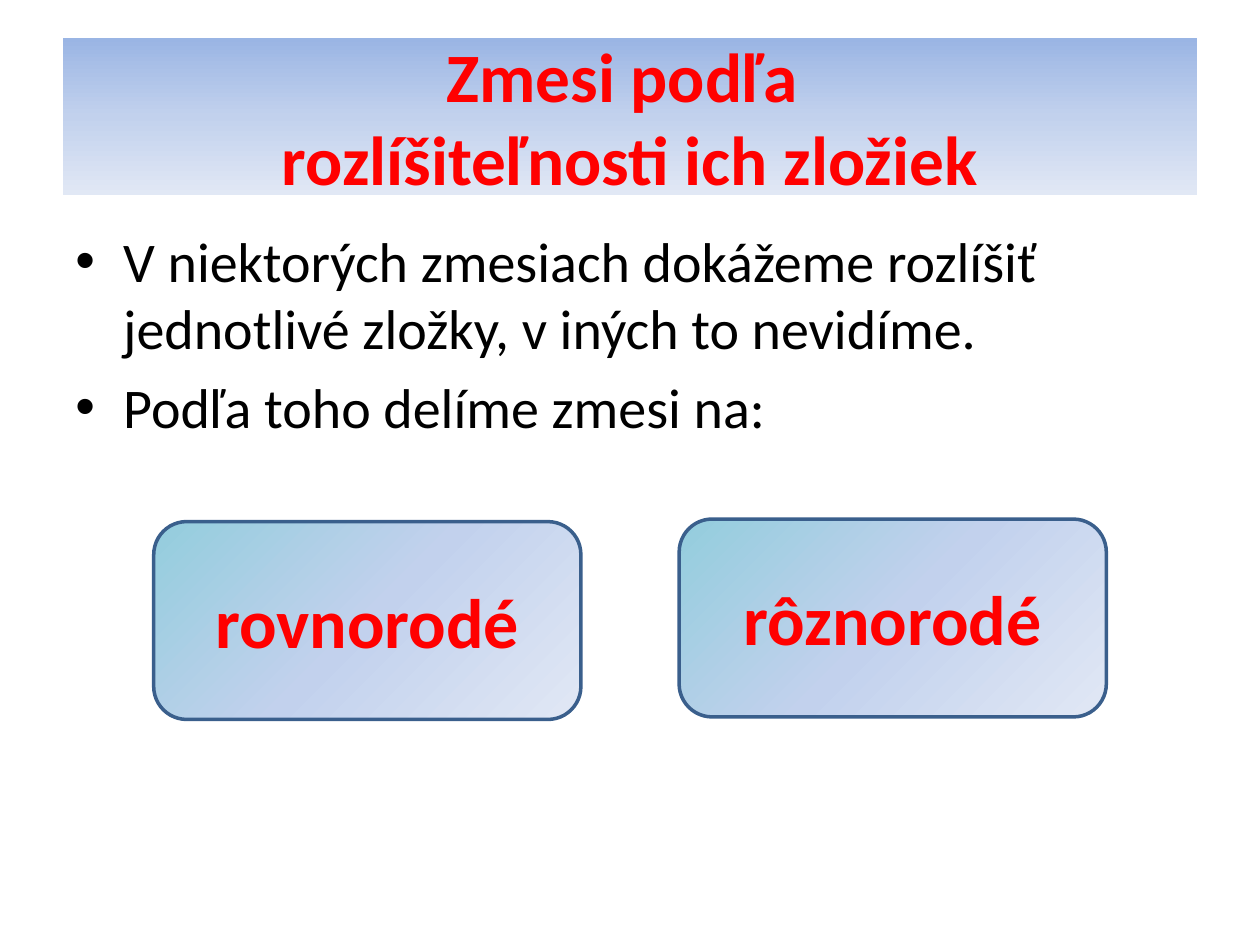
from copy import deepcopy

from lxml.etree import SubElement
from pptx import Presentation
from pptx.dml.color import RGBColor
from pptx.enum.shapes import MSO_SHAPE as Kind
from pptx.enum.text import MSO_ANCHOR as Anchor, MSO_AUTO_SIZE as Fit, PP_ALIGN as Align
from pptx.oxml.ns import qn
from pptx.util import Inches, Pt

RED = RGBColor(0xFF, 0x00, 0x00)
BLACK = RGBColor(0x00, 0x00, 0x00)
EDGE = RGBColor(0x3A, 0x5F, 0x8C)
BLUE = RGBColor(0x9A, 0xB5, 0xE4)
TEAL = RGBColor(0x93, 0xCD, 0xDD)
SOFT = RGBColor(0xC2, 0xD1, 0xED)
PALE = RGBColor(0xE1, 0xE8, 0xF5)


def write(para, text, size=32, color=BLACK, bold=False, align=Align.LEFT, font="Calibri"):
    para.text = text
    para.alignment = align
    para.font.name = font
    para.font.size = Pt(size)
    para.font.color.rgb = color
    para.font.bold = bold
    for run in para.runs:
        run.font.name = font
        run.font.size = Pt(size)
        run.font.color.rgb = color
        run.font.bold = bold


def shade(shape, colors, angle):
    shape.fill.gradient()
    stops = shape.element.spPr.find(".//" + qn("a:gsLst"))
    stops.append(deepcopy(stops[0]))
    for i, (stop, color) in enumerate(zip(shape.fill.gradient_stops, colors)):
        stop.color.rgb = color
        stop.position = i / (len(colors) - 1)
    shape.fill.gradient_angle = 360 - angle


class Deck:
    def __init__(self):
        self.file = Presentation()
        self.file.slide_width = Inches(10)
        self.file.slide_height = Inches(7.5)
        self.slide = self.file.slides.add_slide(self.file.slide_layouts[5])

    def title(self, text, x, y, w, h):
        shape = self.slide.shapes.title
        shape.left, shape.top = Inches(x), Inches(y)
        shape.width, shape.height = Inches(w), Inches(h)
        shade(shape, [BLUE, SOFT, PALE], 90)
        frame = shape.text_frame
        frame.auto_size = Fit.NONE
        frame.vertical_anchor = Anchor.MIDDLE
        write(frame.paragraphs[0], text, size=39.6, color=RED, bold=True, align=Align.CENTER)

    def list(self, items, x, y, w, h):
        box = self.slide.shapes.add_textbox(Inches(x), Inches(y), Inches(w), Inches(h))
        frame = box.text_frame
        frame.word_wrap = True
        for i, item in enumerate(items):
            para = frame.add_paragraph() if i else frame.paragraphs[0]
            props = para._p.get_or_add_pPr()
            props.set("marL", str(Inches(0.38)))
            props.set("indent", str(Inches(-0.38)))
            SubElement(props, qn("a:buFont")).set("typeface", "Arial")
            SubElement(props, qn("a:buChar")).set("char", "•")
            if i:
                para.space_before = Pt(6.4)
            write(para, item)

    def card(self, text, x, y, w=3.39, h=1.57):
        shape = self.slide.shapes.add_shape(
            Kind.ROUNDED_RECTANGLE, Inches(x), Inches(y), Inches(w), Inches(h))
        shape.shadow.inherit = False
        shade(shape, [TEAL, SOFT, PALE], 45)
        shape.line.color.rgb = EDGE
        shape.line.width = Pt(2)
        frame = shape.text_frame
        frame.vertical_anchor = Anchor.MIDDLE
        write(frame.paragraphs[0], text, size=40, color=RED, bold=True, align=Align.CENTER)


def main():
    deck = Deck()
    deck.title("Zmesi podľa \vrozlíšiteľnosti ich zložiek", 0.5, 0.3, 9, 1.25)
    deck.list([
        "V niektorých zmesiach dokážeme rozlíšiť jednotlivé zložky, v iných to nevidíme.",
        "Podľa toho delíme zmesi na:",
    ], 0.5, 1.75, 9, 4.95)
    deck.card("rovnorodé", 1.22, 4.14)
    deck.card("rôznorodé", 5.39, 4.12)
    deck.file.save("out.pptx")


if __name__ == "__main__":
    main()
